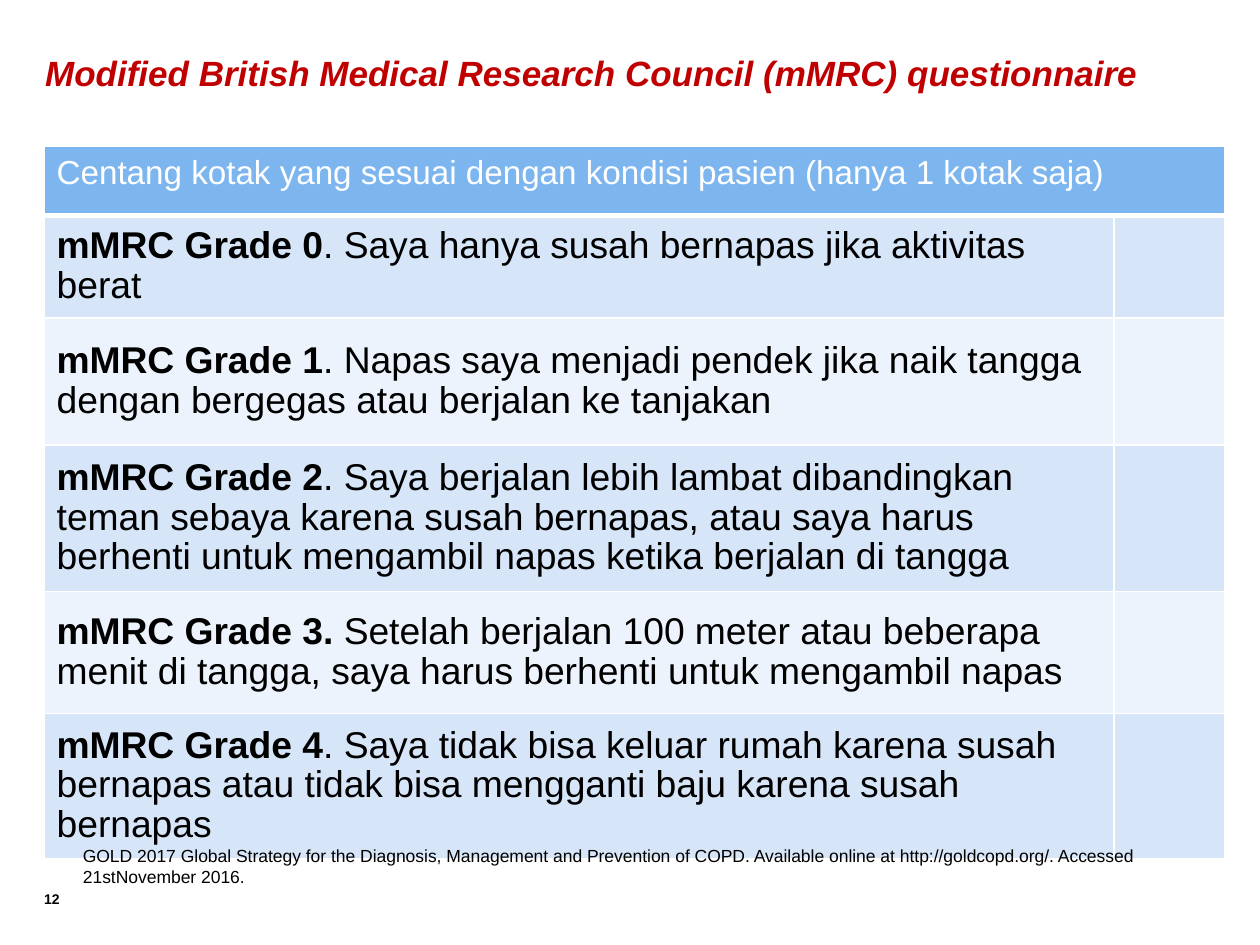
from lxml.etree import SubElement
from pptx import Presentation
from pptx.dml.color import RGBColor
from pptx.enum.text import MSO_ANCHOR as Anchor
from pptx.oxml.ns import qn
from pptx.util import Inches, Pt

COLORS = {
    "title": "C00000",
    "ink": "000000",
    "white": "FFFFFF",
    "header": "7DB6EF",
    "odd": "D7E5F9",
    "even": "ECF3FC",
}
HEADER = "Centang kotak yang sesuai dengan kondisi pasien (hanya 1 kotak saja)"
GRADES = [
    ("mMRC Grade 0", ". Saya hanya susah bernapas jika aktivitas berat", 0.78),
    ("mMRC Grade 1", ". Napas saya menjadi pendek jika naik tangga dengan bergegas "
     "atau berjalan ke tanjakan", 1.01),
    ("mMRC Grade 2", ". Saya berjalan lebih lambat dibandingkan teman sebaya karena "
     "susah bernapas, atau saya harus berhenti untuk mengambil napas ketika berjalan "
     "di tangga", 1.16),
    ("mMRC Grade 3. ", "Setelah berjalan 100 meter atau beberapa menit di tangga, "
     "saya harus berhenti untuk mengambil napas", 0.97),
    ("mMRC Grade 4", ". Saya tidak bisa keluar rumah karena susah bernapas atau "
     "tidak bisa mengganti baju karena susah bernapas", 1.11),
]
SOURCE = ("GOLD 2017 Global Strategy for the Diagnosis, Management and Prevention of "
          "COPD. Available online at http://goldcopd.org/. Accessed 21stNovember 2016.")


def add_run(paragraph, text, size, color="ink", **styles):
    """Append a formatted run to a paragraph."""
    run = paragraph.add_run()
    run.text = text
    formats = {"name": "Arial", "size": Pt(size), **styles}
    for attribute, value in formats.items():
        setattr(run.font, attribute, value)
    run.font.color.rgb = RGBColor.from_string(COLORS[color])


def add_label(slide, box, text, size, color="ink", frame_formats=None, **styles):
    """Place a wrapped line of text in the given box."""
    frame = slide.shapes.add_textbox(*map(Inches, box)).text_frame
    for attribute, value in {"word_wrap": True, **(frame_formats or {})}.items():
        setattr(frame, attribute, value)
    add_run(frame.paragraphs[0], text, size, color, **styles)


def style_cell(cell, fill, anchor, bottom_width=1):
    """Set a cell's margins, anchor, white borders and fill."""
    formats = {"margin_left": Inches(0.1), "margin_right": Inches(0.1),
               "margin_top": Inches(0.07), "margin_bottom": Inches(0.07),
               "vertical_anchor": anchor}
    for attribute, value in formats.items():
        setattr(cell, attribute, value)
    properties = cell._tc.get_or_add_tcPr()
    for side, width in {"lnL": 1, "lnR": 1, "lnT": 1, "lnB": bottom_width}.items():
        border = SubElement(properties, qn(f"a:{side}"), w=str(Pt(width)))
        solid = SubElement(border, qn("a:solidFill"))
        SubElement(solid, qn("a:srgbClr"), val=COLORS["white"])
    cell.fill.solid()
    cell.fill.fore_color.rgb = RGBColor.from_string(COLORS[fill])


def add_questionnaire(slide, left, top, width):
    """Build the grade table with a tick column at the right."""
    heights = [0.55] + [height for *_, height in GRADES]
    tick_width = 0.88
    box = map(Inches, (left, top, width, sum(heights)))
    table = slide.shapes.add_table(len(heights), 2, *box).table
    for column, column_width in zip(table.columns, (width - tick_width, tick_width)):
        column.width = Inches(column_width)
    for row, height in zip(table.rows, heights):
        row.height = Inches(height)

    heading = table.cell(0, 0)
    heading.merge(table.cell(0, 1))
    for cell in table.rows[0].cells:
        style_cell(cell, "header", Anchor.TOP, bottom_width=3)
    add_run(heading.text_frame.paragraphs[0], HEADER, 19, "white", bold=False)

    for number, (grade, statement, _) in enumerate(GRADES, start=1):
        for cell in table.rows[number].cells:
            style_cell(cell, "odd" if number % 2 else "even", Anchor.MIDDLE)
        paragraph = table.cell(number, 0).text_frame.paragraphs[0]
        paragraph.line_spacing = 0.95
        add_run(paragraph, grade, 21.3, bold=True)
        add_run(paragraph, statement, 21.3, bold=False)


def build_slide(slide):
    """Arrange the title, questionnaire, source and page number."""
    add_label(slide, (0.26, 0.21, 9.06, 0.73),
              "Modified British Medical Research Council (mMRC) questionnaire",
              20, "title", {"vertical_anchor": Anchor.MIDDLE}, bold=True, italic=True)
    add_questionnaire(slide, 0.35, 1.16, 9.37)
    add_label(slide, (0.56, 6.66, 8.96, 0.45), SOURCE, 10)
    no_margins = {f"margin_{side}": 0 for side in ("left", "top", "right", "bottom")}
    add_label(slide, (0.35, 7.07, 0.43, 0.24), "12", 8, frame_formats=no_margins,
              bold=True)


def main():
    """Create and save the presentation."""
    deck = Presentation()
    deck.slide_width, deck.slide_height = Inches(10), Inches(7.5)
    build_slide(deck.slides.add_slide(deck.slide_layouts[6]))
    deck.save("out.pptx")


if __name__ == "__main__":
    main()
